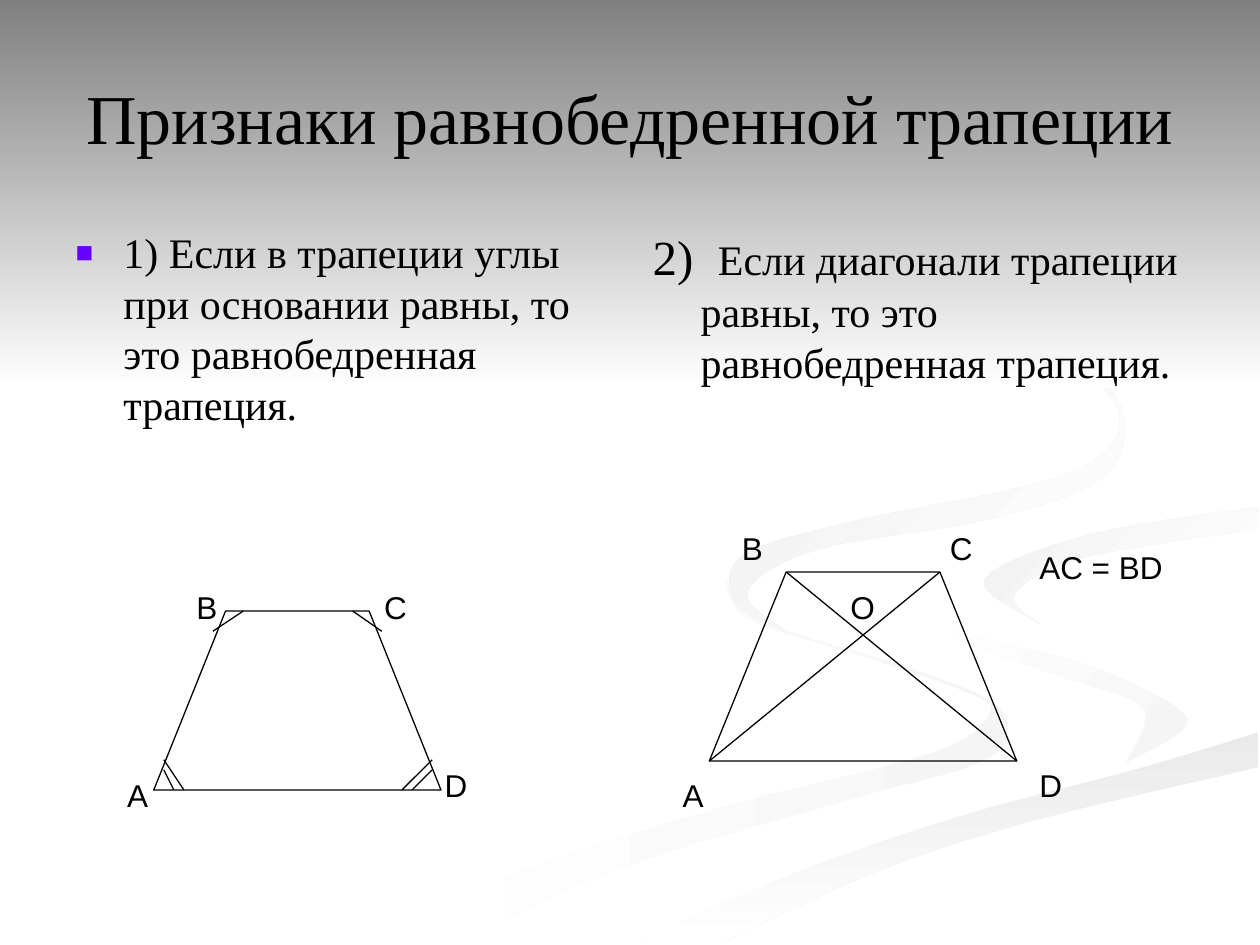
from lxml import etree
from pptx import Presentation
from pptx.dml.color import RGBColor
from pptx.enum.shapes import MSO_CONNECTOR
from pptx.enum.text import MSO_ANCHOR, MSO_AUTO_SIZE, PP_ALIGN
from pptx.oxml.ns import qn
from pptx.util import Inches, Pt

SERIF, SANS = "Times New Roman", "Arial"
BLACK, WHITE, VIOLET = "000000", "FFFFFF", "6600FF"

TITLE = "Признаки равнобедренной трапеции"
TITLE_BOX = (0.5, 0.3, 9, 1.25)
COLUMNS = [
    {"box": (0.5, 1.75, 4.42, 4.95), "bullet": True, "before": 5, "runs": [
        ("1) Если в трапеции углы при основании равны, то это равнобедренная трапеция.", 24)]},
    {"box": (5.08, 1.75, 4.42, 4.95), "bullet": False, "before": 14, "runs": [
        ("2)  ", 28),
        ("Если диагонали трапеции равны, то это равнобедренная трапеция.", 24)]},
]

ANGLES_TRAPEZOID = (1.22, 4.85, 2.28, 1.42)
DIAGONALS_TRAPEZOID = (5.63, 4.54, 2.44, 1.5)
ANGLE_MARKS = [
    ((1.3, 6.03), (1.46, 6.27)), ((1.3, 6.11), (1.38, 6.27)),
    ((1.93, 4.85), (1.69, 5.01)), ((2.8, 4.85), (3.03, 5.01)),
    ((3.43, 6.11), (3.27, 6.27)), ((3.43, 6.03), (3.19, 6.27)),
]
LABELS = [
    ("A", 0.91, 6.11, 0.31), ("B", 1.46, 4.62, 0.39),
    ("C", 2.95, 4.62, 0.47), ("D", 3.43, 6.03, 0.39),
    ("A", 5.32, 6.11, 0.31), ("B", 5.79, 4.15, 0.39),
    ("C", 7.44, 4.15, 0.47), ("D", 8.15, 6.03, 0.39),
    ("O", 6.65, 4.62, 0.47), ("AC = BD", 8.15, 4.3, 1.58),
]
LABEL_HEIGHT = 0.4

BANK = [(9.99, 5.81), (9.03, 6.1), (7.64, 6.47), (6.3, 6.93), (5.03, 7.49)]
INLET = [(9.99, 4.02), (8.65, 4.24), (7.81, 4.6)]
RIBBONS = [
    {"colors": (WHITE, "F5F5F5"), "angle": 0, "edges": [
        [(5.75, 4.59), (5.93, 4.91), (6.79, 5.19), (7.62, 5.47), (7.86, 5.66),
         (7.39, 5.98), (5.79, 6.39), (4.17, 6.9), (3, 7.49)],
        [(3.61, 7.49), (4.99, 6.87), (6.76, 6.34), (7.86, 6.01), (7.92, 5.61),
         (7.15, 5.28), (6.14, 4.96), (5.75, 4.59)]]},
    {"colors": (WHITE, "F5F5F5"), "angle": 45, "edges": [
        [(7.24, 4.64), (7.55, 5.05), (8.38, 5.36), (9.07, 5.62), (8.94, 6.05)],
        [(8.94, 6.05), (9.43, 5.7), (8.7, 5.3), (7.58, 4.98), (7.24, 4.64)]]},
    {"colors": ("EAEAEA", WHITE), "angle": 90, "edges": [
        BANK, [(5.71, 7.49), (6.95, 6.92), (8.21, 6.51), (9.98, 6.09)]]},
    {"colors": (WHITE, WHITE), "angle": 0, "edges": [
        [(4.77, 7.49), (6.19, 6.84), (7.8, 6.34), (9.11, 6), (9.43, 5.7), (8.71, 5.3),
         (7.59, 4.98), (7.25, 4.64), (7.55, 4.32), (8.51, 4.11), (9.99, 3.87)],
        INLET + [(8.32, 4.98), (9.99, 5.38)], BANK]},
    {"colors": ("F1F1F1", WHITE), "angle": 45, "edges": [
        INLET + [(8.26, 4.96)], [(8.26, 4.96), (8.05, 4.72), (8.59, 4.43), (9.98, 4.2)]]},
    {"colors": ("EDEDED", WHITE), "angle": 45, "edges": [
        [(7.62, 2.33), (8.46, 2.79), (8.89, 3.35), (8.42, 3.78), (6.76, 4.14),
         (5.89, 4.41), (5.84, 4.79), (6.22, 5)],
        [(6.22, 5), (5.93, 4.7), (6.49, 4.36), (7.86, 4.12), (8.76, 3.78),
         (8.9, 3.24), (8.43, 2.75), (7.62, 2.33)]]},
    {"colors": ("808080", WHITE), "angle": 90, "edges": [
        [(0, 0), (10, 0)], [(10, 3.08), (0, 3.08)]]},
]
CURVE_STEPS = 6


def rgb(value):
    return RGBColor.from_string(value)


def place(shape, box):
    for name, value in zip(("left", "top", "width", "height"), box):
        setattr(shape, name, Inches(value))


def add_run(paragraph, text, size, font):
    run = paragraph.add_run()
    run.text = text
    for name, value in {"name": font, "size": Pt(size)}.items():
        setattr(run.font, name, value)
    run.font.color.rgb = rgb(BLACK)


def smooth_edge(points):
    padded = [points[0], *points, points[-1]]
    curve = []
    for a, b, c, d in zip(padded, padded[1:], padded[2:], padded[3:]):
        for step in range(CURVE_STEPS):
            t = step / CURVE_STEPS
            curve.append(tuple(
                q + t * ((r - p) + t * ((2 * p - 5 * q + 4 * r - s) + t * (3 * q - p - 3 * r + s))) / 2
                for p, q, r, s in zip(a, b, c, d)))
    return curve + [points[-1]]


def add_outline(shapes, points):
    first, *rest = [(Inches(x), Inches(y)) for x, y in points]
    builder = shapes.build_freeform(*first)
    builder.add_line_segments(rest, close=True)
    shape = builder.convert_to_shape()
    shape.shadow.inherit = False
    return shape


def add_ribbon(shapes, ribbon):
    shape = add_outline(shapes, [point for edge in ribbon["edges"] for point in smooth_edge(edge)])
    shape.line.fill.background()
    shape.fill.gradient()
    shape.fill.gradient_angle = -ribbon["angle"] % 360
    for position, (stop, color) in enumerate(zip(shape.fill.gradient_stops, ribbon["colors"])):
        stop.position = position
        stop.color.rgb = rgb(color)


def draw_line(line):
    line.color.rgb = rgb(BLACK)
    line.width = Pt(0.75)


def add_trapezoid(shapes, left, top, width, height):
    inset, right, bottom = width / 4, left + width, top + height
    corners = [(left, bottom), (left + inset, top), (right - inset, top), (right, bottom)]
    shape = add_outline(shapes, corners)
    shape.fill.background()
    draw_line(shape.line)
    return corners


def add_segment(shapes, start, end):
    connector = shapes.add_connector(MSO_CONNECTOR.STRAIGHT, *map(Inches, start + end))
    draw_line(connector.line)
    etree.SubElement(connector.element.spPr, qn("a:effectLst"))


def add_label(shapes, text, left, top, width):
    frame = shapes.add_textbox(*map(Inches, (left, top, width, LABEL_HEIGHT))).text_frame
    frame.word_wrap = True
    add_run(frame.paragraphs[0], text, 18, SANS)


def set_bullet(paragraph, shown):
    properties = paragraph._p.get_or_add_pPr()
    properties.set("marL", str(Inches(0.38)))
    properties.set("indent", str(-Inches(0.38)))
    if not shown:
        etree.SubElement(properties, qn("a:buNone"))
        return
    color = etree.SubElement(properties, qn("a:buClr"))
    etree.SubElement(color, qn("a:srgbClr"), val=VIOLET)
    etree.SubElement(properties, qn("a:buSzPct"), val="70000")
    etree.SubElement(properties, qn("a:buFont"), typeface=SANS)
    etree.SubElement(properties, qn("a:buChar"), char="■")


def main():
    presentation = Presentation()
    presentation.slide_width, presentation.slide_height = Inches(10), Inches(7.5)
    slide = presentation.slides.add_slide(presentation.slide_layouts[3])
    shapes = slide.shapes
    title, *bodies = list(slide.placeholders)
    for ribbon in RIBBONS:
        add_ribbon(shapes, ribbon)
    for placeholder in (title, *bodies):
        placeholder.element.getparent().append(placeholder.element)
        placeholder.text_frame.auto_size = MSO_AUTO_SIZE.NONE

    place(title, TITLE_BOX)
    title.text_frame.vertical_anchor = MSO_ANCHOR.MIDDLE
    title.text_frame.paragraphs[0].alignment = PP_ALIGN.CENTER
    add_run(title.text_frame.paragraphs[0], TITLE, 40, SERIF)
    for body, column in zip(bodies, COLUMNS):
        place(body, column["box"])
        paragraph = body.text_frame.paragraphs[0]
        paragraph.space_before = Pt(column["before"])
        set_bullet(paragraph, column["bullet"])
        for text, size in column["runs"]:
            add_run(paragraph, text, size, SERIF)

    add_trapezoid(shapes, *ANGLES_TRAPEZOID)
    a, b, c, d = add_trapezoid(shapes, *DIAGONALS_TRAPEZOID)
    for start, end in ANGLE_MARKS + [(b, d), (c, a)]:
        add_segment(shapes, start, end)
    for label in LABELS:
        add_label(shapes, *label)
    presentation.save("out.pptx")


if __name__ == "__main__":
    main()
